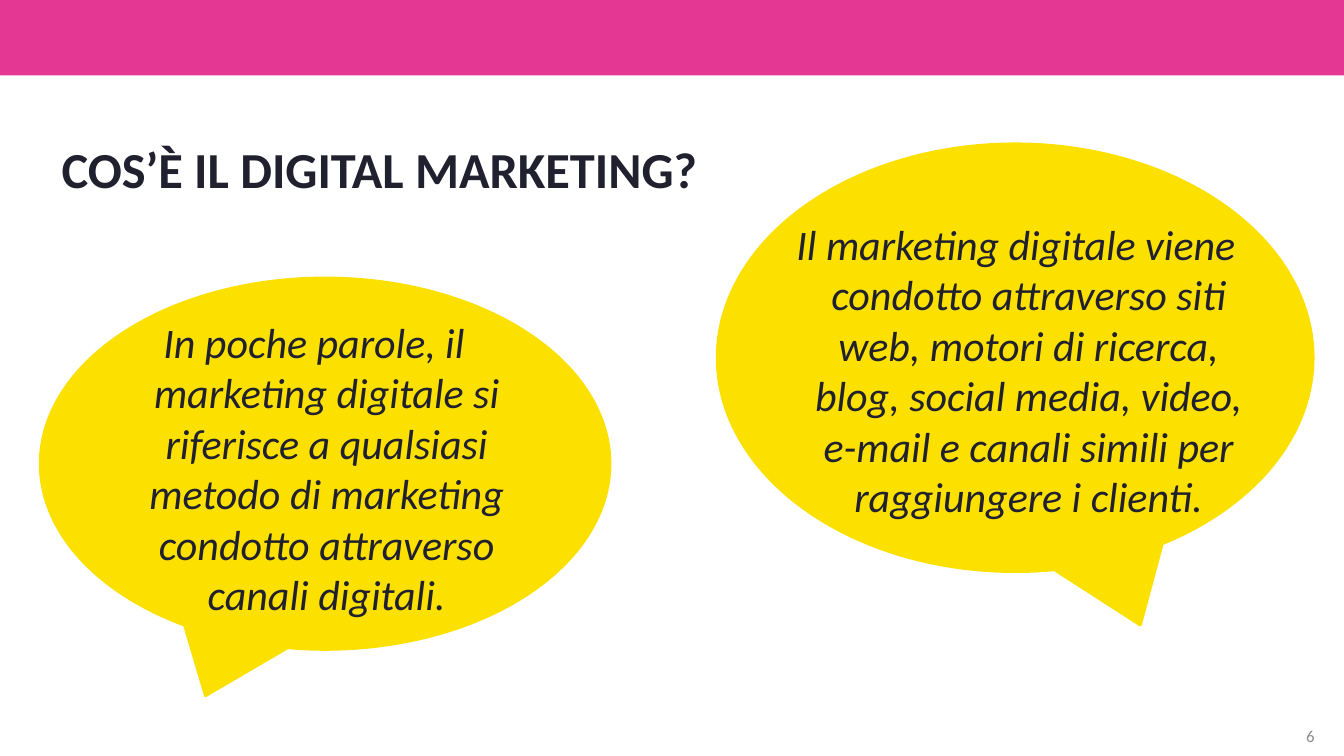
import dataclasses

import pptx
import pptx.dml.color
import pptx.enum.shapes
import pptx.enum.text
import pptx.util

Cm = pptx.util.Cm
Pt = pptx.util.Pt
Align = pptx.enum.text.PP_ALIGN
Anchor = pptx.enum.text.MSO_ANCHOR
Shape = pptx.enum.shapes.MSO_SHAPE


@dataclasses.dataclass(frozen=True)
class Theme:
    font: str = "Calibri"
    band: str = "E43794"
    bubble: str = "FBE000"
    ink: str = "21202E"
    muted: str = "8C8C8C"
    title: int = 36
    quote: int = 30
    number: int = 12
    edge: float = 2.25
    hang: float = 0.64


def color(code):
    return pptx.dml.color.RGBColor.from_string(code)


def write(frame, text, *, font, size, ink, bold=False, italic=False,
          align=Align.LEFT, anchor=Anchor.TOP, spacing=1.0, hang=0):
    frame.word_wrap = True
    frame.auto_size = pptx.enum.text.MSO_AUTO_SIZE.NONE
    frame.vertical_anchor = anchor
    para = frame.paragraphs[0]
    para.text = text
    para.alignment = align
    para.line_spacing = spacing
    para.space_before = Pt(0)
    if hang:
        props = para._p.get_or_add_pPr()
        props.set("marL", str(Cm(hang)))
        props.set("indent", str(-Cm(hang)))
    style = para.runs[0].font
    style.name, style.size = font, Pt(size)
    style.bold, style.italic = bold, italic
    style.color.rgb = color(ink)


class Deck:
    def __init__(self, theme):
        self.theme = theme
        self.show = pptx.Presentation()
        self.show.slide_width, self.show.slide_height = Cm(33.87), Cm(19.05)
        self.slide = self.show.slides.add_slide(self.show.slide_layouts[5])

    def shape(self, kind, box, fill):
        item = self.slide.shapes.add_shape(kind, *map(Cm, box))
        item.shadow.inherit = False
        item.fill.solid()
        item.fill.fore_color.rgb = color(fill)
        item.line.fill.background()
        return item

    def title(self, text, box):
        item = self.slide.shapes.title
        item.left, item.top, item.width, item.height = map(Cm, box)
        write(item.text_frame, text, font=self.theme.font, size=self.theme.title,
              ink=self.theme.ink, bold=True, spacing=0.9)

    def text(self, text, box, **style):
        item = self.slide.shapes.add_textbox(*map(Cm, box))
        write(item.text_frame, text, font=self.theme.font, **style)

    def bubble(self, text, box, area, tail):
        """Draw a speech bubble; tail is its tip's sideways shift as a share of the width."""
        item = self.shape(Shape.OVAL_CALLOUT, box, self.theme.bubble)
        item.adjustments[0], item.adjustments[1] = tail, 0.625
        item.line.color.rgb = color(self.theme.bubble)
        item.line.width = Pt(self.theme.edge)
        self.text(text, area, size=self.theme.quote, ink=self.theme.ink,
                  italic=True, align=Align.CENTER, hang=self.theme.hang)

    def number(self, text, box):
        self.text(text, box, size=self.theme.number, ink=self.theme.muted,
                  align=Align.RIGHT, anchor=Anchor.MIDDLE)


def main():
    deck = Deck(Theme())
    deck.shape(Shape.RECTANGLE, (0, 0, 33.87, 1.9), deck.theme.band)
    deck.number("6", (21.44, 18.21, 11.94, 0.64))
    deck.title("COS’È IL DIGITAL MARKETING?", (1.3, 3.53, 31.27, 1.75))
    deck.bubble(
        "In poche parole, il marketing digitale si riferisce a qualsiasi "
        "metodo di marketing condotto attraverso canali digitali.",
        (1.02, 7.01, 14.35, 9.35), (1.78, 7.85, 12.27, 7.67), tail=-0.21)
    deck.bubble(
        "Il marketing digitale viene condotto attraverso siti web, motori di "
        "ricerca, blog, social media, video, e-mail e canali simili per "
        "raggiungere i clienti.",
        (18.08, 3.63, 15.01, 10.77), (19.13, 5.38, 12.95, 8.26), tail=0.21)
    deck.show.save("out.pptx")


if __name__ == "__main__":
    main()
